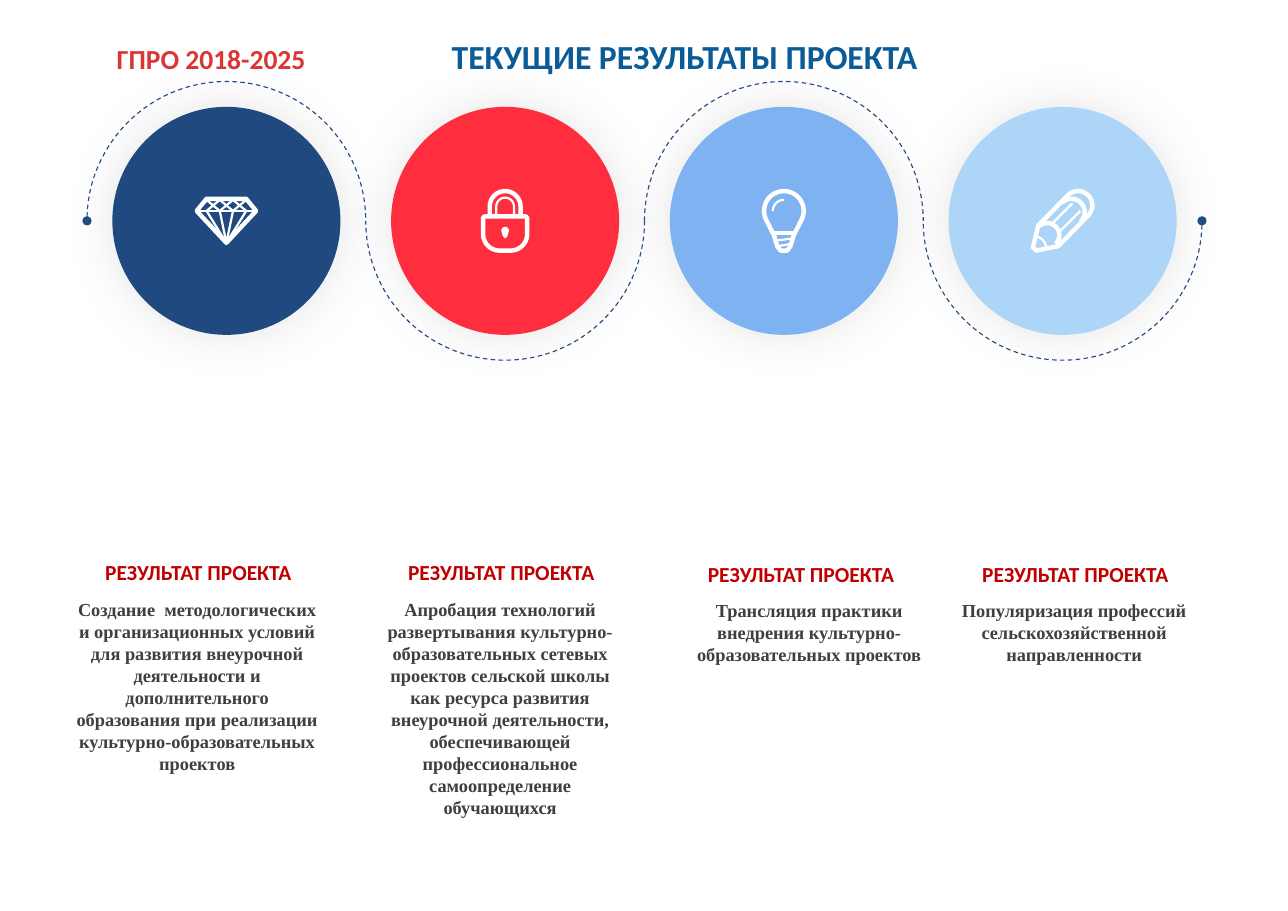
from math import cos, radians, sin

from lxml import etree
from pptx import Presentation
from pptx.dml.color import RGBColor
from pptx.enum.dml import MSO_LINE
from pptx.enum.shapes import MSO_SHAPE
from pptx.enum.text import MSO_ANCHOR, PP_ALIGN
from pptx.oxml import parse_xml
from pptx.oxml.ns import nsdecls, qn
from pptx.util import Emu, Pt

ARC, OVAL = MSO_SHAPE.ARC, MSO_SHAPE.OVAL
DASH = MSO_LINE.DASH
LEFT, CENTER = PP_ALIGN.LEFT, PP_ALIGN.CENTER
TOP, MIDDLE = MSO_ANCHOR.TOP, MSO_ANCHOR.MIDDLE

PX = 9144  # 100 px to the inch
COLORS = {
    "program": "D93635", "title": "0B5B97", "heading": "C00000",
    "body": "3F3F3F", "wave": "1D477F", "icon": "FFFFFF", "shadow": "BFBFBF",
    "diamond": "20497F", "lock": "FE2E3E", "bulb": "7FB2F0", "pencil": "ADD5F7",
}
PITCH = 253  # distance between neighbouring circles
DISC = 207
THICK, THIN = 4, 2

# Left, top, left margin and text of each result
RESULTS = [
    (51, 503, 5, "Создание  методологических и организационных условий для "
     "развития внеурочной деятельности и дополнительного образования при "
     "реализации культурно-образовательных проектов"),
    (326, 503, 5, "Апробация технологий развертывания культурно-образовательных "
     "сетевых проектов сельской школы как ресурса развития внеурочной "
     "деятельности, обеспечивающей профессиональное самоопределение обучающихся"),
    (598, 504, 22, "Трансляция практики внедрения культурно-образовательных проектов"),
    (847, 504, 5, "Популяризация профессий сельскохозяйственной направленности"),
]


def px(length):
    return Emu(round(length * PX))


def color(name):
    return RGBColor.from_string(COLORS[name])


def arc(x, y, radius, start, end):
    """Points along a circular arc, clockwise, in degrees."""
    steps = 24
    angles = [radians(start + (end - start) * i / steps) for i in range(steps + 1)]
    return [(x + radius * cos(a), y + radius * sin(a)) for a in angles]


# Icon strokes around the circle's centre: width, closed, points
ICONS = {
    "diamond": [
        (THICK, True, [(-27, -9), (-18, -20), (18, -20), (27, -9), (0, 20)]),
        (THIN, False, [(-27, -9), (27, -9)]),
        (THIN, False, [(-18, -19), (-6, -9), (6, -19), (18, -9)]),
        (THIN, False, [(-18, -9), (-6, -19), (6, -9), (18, -19)]),
        (THIN, False, [(-18, -9), (0, 20), (18, -9)]),
        (THIN, False, [(-6, -9), (0, 20), (6, -9)]),
    ],
    "lock": [
        (THICK, True, arc(-18, -2, 2, 180, 270) + arc(18, -2, 2, 270, 360)
         + arc(5, 12, 15, 0, 90) + arc(-5, 12, 15, 90, 180)),
        (THICK, False, [(-14, -4)] + arc(0, -13, 14, 180, 360) + [(14, -4)]),
        (THIN, False, [(-8, -4)] + arc(0, -13, 8, 180, 360) + [(8, -4)]),
        (0, True, arc(0, 9, 3.5, 180, 360) + [(2, 14), (0, 16), (-2, 14)]),
    ],
    "bulb": [
        (THICK, True, arc(0, -9, 18, 155, 385)
         + [(9, 13), (6, 23), (3, 27), (-3, 27), (-6, 23), (-9, 13)]),
        (THICK, False, [(-10, 11), (10, 11)]),
        (THIN, False, [(-8, 18), (8, 16)]),
        (THIN, False, [(-6, 23), (6, 21)]),
        (THIN, False, arc(0, -9, 10, 180, 270)),
    ],
    "pencil": [
        (THICK, True, arc(14, -14, 13, 225, 405)
         + [(-4, 23), (-24, 27), (-27, 24), (-22, 4)]),
        (THICK, False, arc(-14, 13, 11, 225, 405)),
        (THICK, False, arc(8, -8, 12, 225, 405)),
        (THIN, False, [(-9, 2), (9, -16)]),
        (THIN, False, [(-2, 9), (16, -9)]),
        (THIN, False, arc(-26, 25, 11, 270, 360)),
    ],
}


def add_text(slide, box, text, font, size, color_name,
             align=CENTER, anchor=TOP, margin=0):
    shape = slide.shapes.add_textbox(*map(px, box))
    frame = shape.text_frame
    frame.word_wrap = True
    frame.vertical_anchor = anchor
    frame.margin_left = frame.margin_right = px(11)
    frame.margin_top = frame.margin_bottom = px(5)
    frame.text = text
    paragraph = frame.paragraphs[0]
    paragraph.alignment = align
    if margin:
        paragraph._p.get_or_add_pPr().set("marL", str(px(margin)))
    run_font = paragraph.runs[0].font
    run_font.name, run_font.size, run_font.bold = font, Pt(size), True
    run_font.color.rgb = color(color_name)


def add_header(slide, box):
    left, top, width, height = box
    add_text(slide, (left, top + 33, 240, 40), "ГПРО 2018-2025", "Calibri", 18,
             "program", LEFT)
    add_text(slide, (left + 304, top, width - 304, height),
             "ТЕКУЩИЕ РЕЗУЛЬТАТЫ ПРОЕКТА", "Calibri", 22, "title", LEFT, MIDDLE)


def add_wave(slide, box, count):
    """Half circles, alternately above and below, with a dot at both ends."""
    left, top, width, height = box
    for i in range(count):
        shape = slide.shapes.add_shape(
            ARC, px(left + i * PITCH), px(top), px(width), px(height))
        shape.shadow.inherit = False
        # Adjustments are angles: 108 stands for 180 degrees
        start, end = (0, 108) if i % 2 else (108, 0)
        shape.adjustments[0], shape.adjustments[1] = start, end
        shape.fill.background()
        shape.line.color.rgb = color("wave")
        shape.line.width = Pt(0.75)
        shape.line.dash_style = DASH
        if i in (0, count - 1):
            line = shape.line._get_or_add_ln()
            etree.SubElement(line, qn("a:headEnd"), type="oval")


def add_icon(slide, x, y, strokes):
    for width, closed, points in strokes:
        corners = [(px(x + dx), px(y + dy)) for dx, dy in points]
        builder = slide.shapes.build_freeform(*corners[0], scale=1.0)
        builder.add_line_segments(corners[1:], close=closed)
        shape = builder.convert_to_shape()
        shape.shadow.inherit = False
        if width:
            shape.fill.background()
            shape.line.color.rgb = color("icon")
            shape.line.width = px(width)
        else:
            shape.fill.solid()
            shape.fill.fore_color.rgb = color("icon")
            shape.line.fill.background()


def add_disc(slide, box, name):
    left, top, width, height = box
    shape = slide.shapes.add_shape(OVAL, *map(px, box))
    shape.fill.solid()
    shape.fill.fore_color.rgb = color(name)
    shape.line.fill.background()
    # Soft glow-like shadow
    shape._element.spPr.append(parse_xml(
        f'<a:effectLst {nsdecls("a")}><a:outerShdw blurRad="{Pt(30)}" dist="0">'
        f'<a:srgbClr val="{COLORS["shadow"]}"><a:alpha val="40000"/></a:srgbClr>'
        '</a:outerShdw></a:effectLst>'))
    add_icon(slide, left + width / 2, top + height / 2, ICONS[name])


def add_result(slide, box, margin, text):
    left, top, width, height = box
    add_text(slide, (left, top, width, 35), "РЕЗУЛЬТАТ ПРОЕКТА", "Calibri", 14, "heading")
    add_text(slide, (left, top + 35, width - 7, height - 35), text,
             "Times New Roman", 12, "body", margin=margin)


def main():
    presentation = Presentation()
    presentation.slide_width, presentation.slide_height = px(1169), px(827)
    slide = presentation.slides.add_slide(presentation.slide_layouts[6])

    add_header(slide, (95, 0, 1057, 102))
    add_wave(slide, (79, 74, PITCH, PITCH), len(ICONS))
    for i, name in enumerate(ICONS):
        add_disc(slide, (102 + i * PITCH, 97, DISC, DISC), name)
    for left, top, margin, text in RESULTS:
        add_result(slide, (left, top, 258, 257), margin, text)

    presentation.save("out.pptx")


if __name__ == "__main__":
    main()
